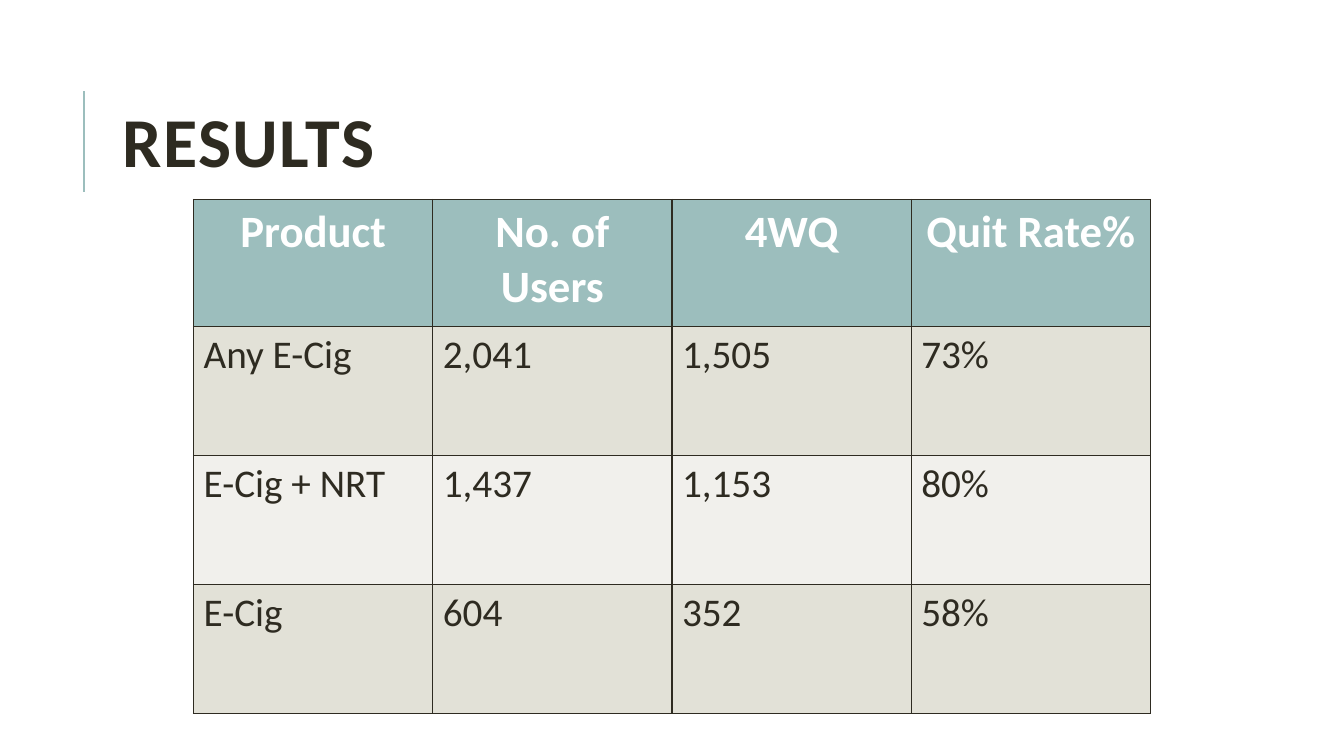
from lxml.etree import SubElement
from pptx import Presentation
from pptx.dml.color import RGBColor
from pptx.enum.shapes import MSO_CONNECTOR
from pptx.enum.text import MSO_ANCHOR as Anchor, PP_ALIGN as Align
from pptx.oxml.ns import qn
from pptx.util import Pt

PX = 9144
FONT = "Calibri"
DARK = "2E2B21"
TEAL = "9CBEBD"
WHITE = "FFFFFF"
BANDS = ("E2E1D7", "F1F0EC")
RESULTS = (
    ("Product", "No. of Users", "4WQ", "Quit Rate%"),
    ("Any E-Cig", "2,041", "1,505", "73%"),
    ("E-Cig + NRT", "1,437", "1,153", "80%"),
    ("E-Cig", "604", "352", "58%"),
)


def px(*lengths):
    return [length * PX for length in lengths]


def set_color(color_format, color):
    color_format.rgb = RGBColor.from_string(color)


def write(paragraph, text, size, color, bold):
    paragraph.text = text
    font = paragraph.font
    font.name, font.size, font.bold = FONT, Pt(size), bold
    set_color(font.color, color)


def add_accent_line(slide, x, top, bottom):
    line = slide.shapes.add_connector(MSO_CONNECTOR.STRAIGHT, *px(x, bottom, x, top))
    set_color(line.line.color, TEAL)
    line.line.width = Pt(1.5)
    SubElement(line._element.spPr, qn("a:effectLst"))


def add_title(slide, text, left, top, width, height):
    frame = slide.shapes.add_textbox(*px(left, top, width, height)).text_frame
    frame.word_wrap = True
    frame.vertical_anchor = Anchor.MIDDLE
    paragraph = frame.paragraphs[0]
    paragraph.line_spacing = 0.8
    write(paragraph, text, 50, DARK, True)
    paragraph.runs[0].font._element.set("spc", "100")


def add_borders(cell):
    properties = cell._tc.get_or_add_tcPr()
    for position, side in enumerate(("lnL", "lnR", "lnT", "lnB")):
        border = properties.makeelement(qn(f"a:{side}"), {"w": str(Pt(1))})
        fill = SubElement(border, qn("a:solidFill"))
        SubElement(fill, qn("a:srgbClr"), val=DARK)
        properties.insert(position, border)


def fill_cell(cell, text, size, color, background, bold, align):
    cell.fill.solid()
    set_color(cell.fill.fore_color, background)
    add_borders(cell)
    paragraph = cell.text_frame.paragraphs[0]
    paragraph.alignment = align
    write(paragraph, text, size, color, bold)


def add_results_table(slide, rows, left, top, width, header_height, row_height):
    height = header_height + row_height * (len(rows) - 1)
    frame = slide.shapes.add_table(
        len(rows), len(rows[0]), *px(left, top, width, height)
    )
    table = frame.table
    for index, values in enumerate(rows):
        if index == 0:
            row_size, style = header_height, (32, WHITE, TEAL, True, Align.CENTER)
        else:
            background = BANDS[(index - 1) % 2]
            row_size, style = row_height, (28, DARK, background, False, Align.LEFT)
        table.rows[index].height = row_size * PX
        for column, text in enumerate(values):
            fill_cell(table.cell(index, column), text, *style)


def main():
    presentation = Presentation()
    presentation.slide_width, presentation.slide_height = px(1333, 750)
    slide = presentation.slides.add_slide(presentation.slide_layouts[6])
    add_accent_line(slide, 83, 90, 190)
    add_title(slide, "RESULTS", 112, 64, 1063, 164)
    add_results_table(slide, RESULTS, 192, 198, 949, 126, 128)
    presentation.save("out.pptx")


if __name__ == "__main__":
    main()
